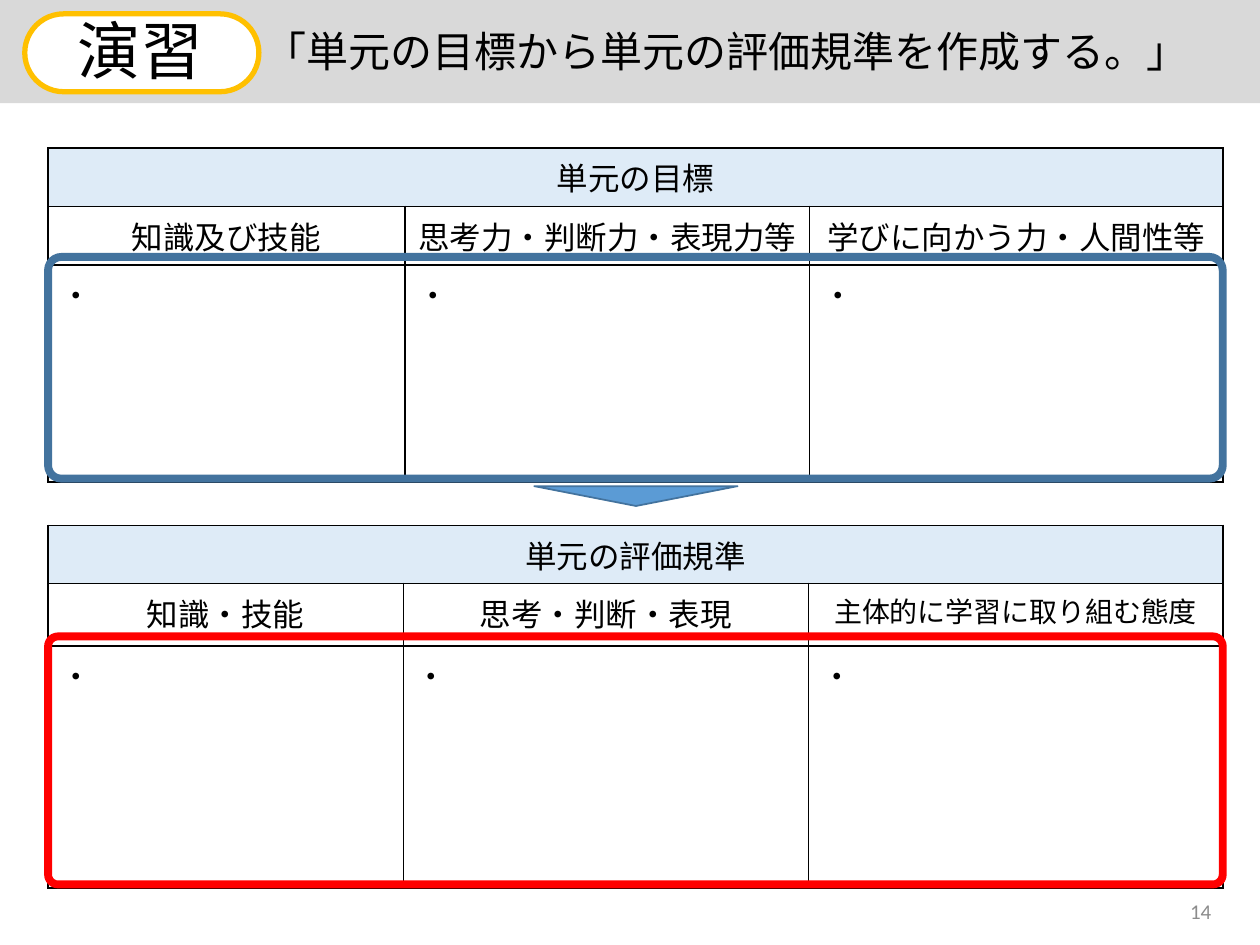
from lxml.etree import SubElement
from pptx import Presentation
from pptx.dml.color import RGBColor
from pptx.enum.shapes import MSO_SHAPE as Shape
from pptx.enum.text import MSO_ANCHOR as Anchor, PP_ALIGN as Align
from pptx.oxml.ns import qn
from pptx.util import Cm, Pt

COLORS = {
    "black": "000000", "white": "FFFFFF", "bar": "D9D9D9", "header": "DEEBF7",
    "blue": "5B9BD5", "dark_blue": "43739E", "red": "FF0000",
    "gold": "FFC000", "number": "8C8C8C",
}
FONT = "Noto Sans CJK JP"


def color(name):
    """Return the named colour."""
    return RGBColor.from_string(COLORS[name])


def write_text(frame, text, size=18, font=FONT, ink="black",
               align=Align.LEFT, anchor=Anchor.TOP, wrap=True):
    """Write one formatted paragraph in a text frame."""
    frame.word_wrap = wrap
    frame.vertical_anchor = anchor
    paragraph = frame.paragraphs[0]
    paragraph.alignment = align
    run = paragraph.add_run()
    run.text = text
    run.font.size = Pt(size)
    run.font.color.rgb = color(ink)
    run.font.name = font
    SubElement(run._r.get_or_add_rPr(), qn("a:ea"), typeface=font)


def add_box(slide, kind, box, fill=None, line=None, width=1, corner=None):
    """Add a preset shape with the given fill and outline."""
    shape = slide.shapes.add_shape(kind, *map(Cm, box))
    shape.shadow.inherit = False
    if fill:
        shape.fill.solid()
        shape.fill.fore_color.rgb = color(fill)
    else:
        shape.fill.background()
    if line:
        shape.line.color.rgb = color(line)
        shape.line.width = Pt(width)
    else:
        shape.line.fill.background()
    if corner is not None:
        shape.adjustments[0] = corner
    return shape


def add_label(slide, box, text, **text_format):
    """Add a text box holding one line."""
    label = slide.shapes.add_textbox(*map(Cm, box))
    write_text(label.text_frame, text, **text_format)


def format_cell(cell, fill=None):
    """Give a cell thin black borders and its fill."""
    properties = cell._tc.get_or_add_tcPr()
    for side in ("lnL", "lnR", "lnT", "lnB"):
        border = SubElement(properties, qn(f"a:{side}"), w=str(Pt(1)))
        solid = SubElement(border, qn("a:solidFill"))
        SubElement(solid, qn("a:srgbClr"), val=COLORS["black"])
    if fill:
        cell.fill.solid()
        cell.fill.fore_color.rgb = color(fill)
    else:
        cell.fill.background()


def add_unit_table(slide, box, title, headings, columns, rows, anchor, sizes):
    """Add a titled table with three headed columns to fill in."""
    table = slide.shapes.add_table(3, 3, *map(Cm, box)).table
    table.first_row = table.horz_banding = False
    for column, width in zip(table.columns, columns):
        column.width = Cm(width)
    for row, height in zip(table.rows, rows):
        row.height = Cm(height)
    for index in range(3):
        format_cell(table.cell(0, index), "header")
        format_cell(table.cell(1, index))
        format_cell(table.cell(2, index))
        write_text(table.cell(1, index).text_frame, headings[index],
                   size=sizes[index], align=Align.CENTER)
        table.cell(1, index).vertical_anchor = anchor
        write_text(table.cell(2, index).text_frame, "・")
    table.cell(0, 0).merge(table.cell(0, 2))
    write_text(table.cell(0, 0).text_frame, title, align=Align.CENTER)
    table.cell(0, 0).vertical_anchor = anchor


def add_title_bar(slide, box):
    """Add the grey bar with the exercise title."""
    bar = add_box(slide, Shape.RECTANGLE, box, fill="bar")
    write_text(bar.text_frame, "「単元の目標から単元の評価規準を作成する。」",
               size=24, anchor=Anchor.MIDDLE)
    bar.text_frame.margin_left = Cm(5.33)


def add_badge(slide, box):
    """Add the rounded exercise badge."""
    left, top, width, height = box
    add_box(slide, Shape.ROUNDED_RECTANGLE, box, fill="white",
            line="gold", width=3, corner=0.5)
    add_label(slide, (left + 0.81, top - 0.18, width - 1.65, height + 0.23),
              "演習", size=36, wrap=False)


def add_frame(slide, box, line, corner):
    """Outline the part of a table to work on."""
    add_box(slide, Shape.ROUNDED_RECTANGLE, box, line=line, width=4.5,
            corner=corner)


def main():
    """Build and save the slide."""
    presentation = Presentation()
    presentation.slide_width, presentation.slide_height = Cm(25.4), Cm(19.05)
    slide = presentation.slides.add_slide(presentation.slide_layouts[6])
    left, width = 0.97, 23.68

    add_label(slide, (18.95, 17.86, 5.72, 1.01), "14", size=12, font="Calibri",
              ink="number", align=Align.RIGHT, anchor=Anchor.MIDDLE)
    arrow = add_box(slide, Shape.ISOSCELES_TRIANGLE, (10.77, 9.8, 4.1, 0.4),
                    fill="blue", line="dark_blue")
    arrow.rotation = 180
    add_unit_table(
        slide, (left, 10.59, width, 7.3), "単元の評価規準",
        ("知識・技能", "思考・判断・表現", "主体的に学習に取り組む態度"),
        columns=(7.16, 8.17, 8.35), rows=(1.17, 1.26, 4.88),
        anchor=Anchor.TOP, sizes=(18, 18, 16))
    add_unit_table(
        slide, (left, 2.98, width, 6.74), "単元の目標",
        ("知識及び技能", "思考力・判断力・表現力等", "学びに向かう力・人間性等"),
        columns=(7.19, 8.16, 8.33), rows=(1.18, 1.18, 4.38),
        anchor=Anchor.MIDDLE, sizes=(18, 18, 18))
    add_title_bar(slide, (0, -0.03, 25.4, 2.11))
    add_frame(slide, (left, 5.18, width, 4.47), "dark_blue", 0.06)
    add_frame(slide, (left, 12.83, width, 5), "red", 0.04)
    add_badge(slide, (0.5, 0.28, 4.72, 1.57))
    presentation.save("out.pptx")


if __name__ == "__main__":
    main()
